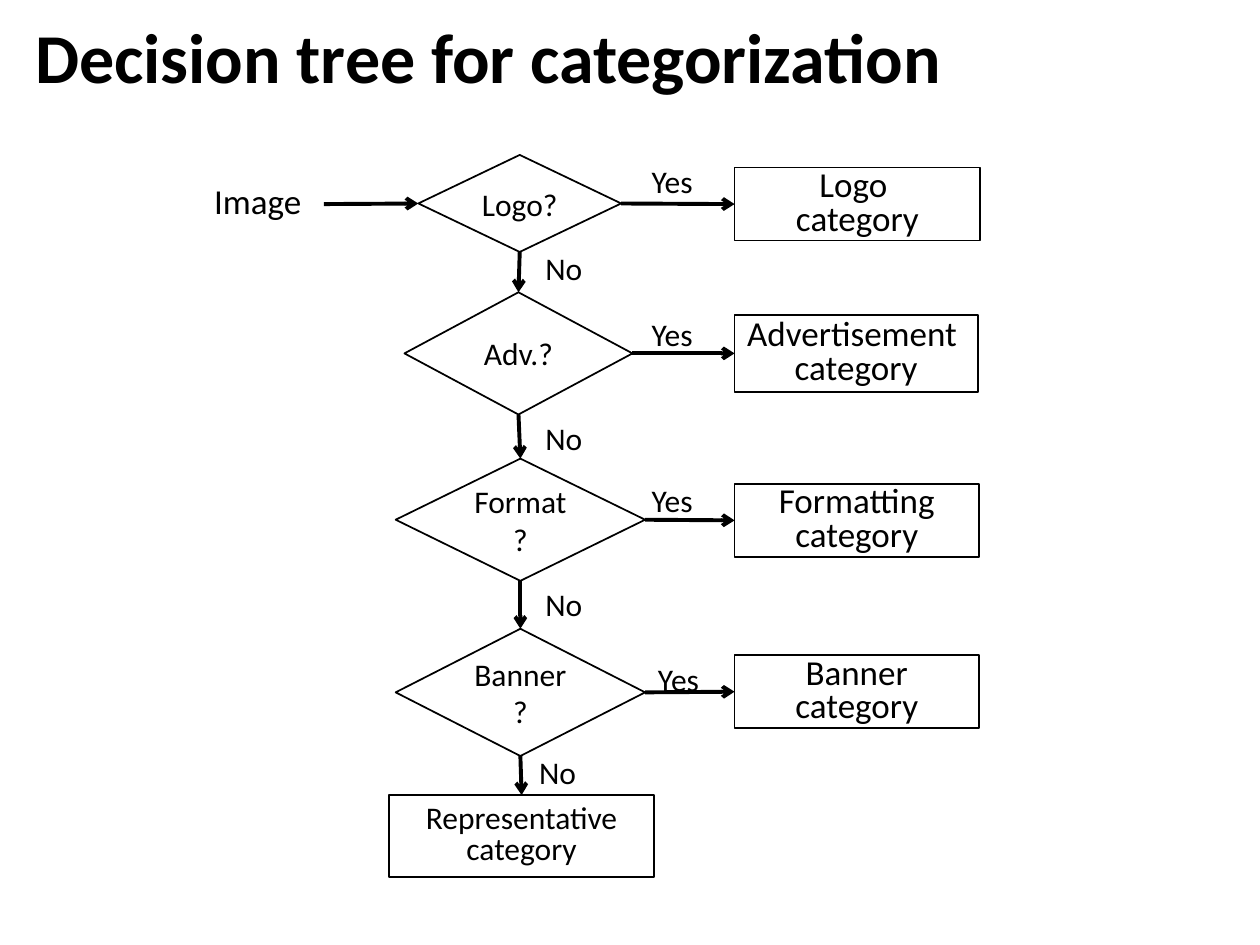
"""Build a slide with a decision tree for sorting images into categories."""
from dataclasses import dataclass

import lxml.etree
import pptx
import pptx.dml.color
import pptx.enum.shapes
import pptx.enum.text
import pptx.oxml.ns
import pptx.util

Inches = pptx.util.Inches
Pt = pptx.util.Pt
MSO = pptx.enum.shapes.MSO_SHAPE
ALIGN = pptx.enum.text.PP_ALIGN
ANCHOR = pptx.enum.text.MSO_ANCHOR
TOP, LEFT, BOTTOM, RIGHT = range(4)


@dataclass(frozen=True)
class Theme:
    """Colours, type sizes and line widths."""
    font: str = "Calibri"
    ink: pptx.dml.color.RGBColor = pptx.dml.color.RGBColor(0, 0, 0)
    paper: pptx.dml.color.RGBColor = pptx.dml.color.RGBColor(255, 255, 255)
    title: int = 40
    category: int = 20
    question: int = 18
    outline: float = 1
    arrow: float = 2.25


@dataclass(frozen=True)
class Box:
    """Place and text of a shape, in inches."""
    text: str
    x: float
    y: float
    w: float
    h: float


@dataclass(frozen=True)
class Step:
    """A question, its category and the places of its two answers."""
    question: Box
    category: Box
    yes: tuple[float, float]
    no: tuple[float, float]


THEME = Theme()
IMAGE = Box("Image", 1.39, 1.34, 1.31, 0.51)
REST = Box("Representative\ncategory", 3.09, 6.31, 2.1, 0.65)
STEPS = [
    Step(Box("Logo?", 3.32, 1.23, 1.61, 0.77),
         Box("Logo \ncategory", 5.83, 1.33, 1.95, 0.58), (4.93, 1.24), (4.07, 1.93)),
    Step(Box("Adv.?", 3.21, 2.32, 1.81, 0.97),
         Box("Advertisement \ncategory", 5.83, 2.5, 1.93, 0.61), (4.93, 2.45), (4.07, 3.28)),
    Step(Box("Format?", 3.14, 3.64, 1.98, 0.97),
         Box("Formatting\ncategory", 5.83, 3.84, 1.94, 0.58), (4.93, 3.77), (4.07, 4.59)),
    Step(Box("Banner?", 3.14, 4.99, 1.98, 1.01),
         Box("Banner\ncategory", 5.83, 5.2, 1.94, 0.58), (4.98, 5.19), (4.02, 5.93)),
]


def write(tf, text: str, *, size: int, bold: bool = False, align=ALIGN.CENTER,
          anchor=ANCHOR.MIDDLE, spacing: float | None = None) -> None:
    """Fill a text frame, one paragraph per line of text."""
    tf.word_wrap = True
    tf.vertical_anchor = anchor
    for i, line in enumerate(text.split("\n")):
        p = tf.add_paragraph() if i else tf.paragraphs[0]
        p.alignment = align
        p.line_spacing = spacing
        r = p.add_run()
        r.text = line
        r.font.name = THEME.font
        r.font.size = Pt(size)
        r.font.bold = bold
        r.font.color.rgb = THEME.ink


def add_box(s, box: Box, kind=MSO.RECTANGLE, *, size: int, outlined: bool = True,
            spacing: float | None = None):
    """Draw a filled shape with centred text."""
    sp = s.shapes.add_shape(kind, *map(Inches, (box.x, box.y, box.w, box.h)))
    sp.shadow.inherit = False
    sp.fill.solid()
    sp.fill.fore_color.rgb = THEME.paper
    if outlined:
        sp.line.color.rgb = THEME.ink
        sp.line.width = Pt(THEME.outline)
    else:
        sp.line.fill.background()
    write(sp.text_frame, box.text, size=size, spacing=spacing)
    return sp


def add_arrow(s, end, end_site: int, begin=None, begin_site: int = RIGHT,
              start: tuple[float, float] = (0, 0)) -> None:
    """Draw an arrow to a shape from another shape or a free point."""
    x, y = map(Inches, start)
    c = s.shapes.add_connector(pptx.enum.shapes.MSO_CONNECTOR.STRAIGHT, x, y, x, y)
    if begin is not None:
        c.begin_connect(begin, begin_site)
    c.end_connect(end, end_site)
    c.line.color.rgb = THEME.ink
    c.line.width = Pt(THEME.arrow)
    qn = pptx.oxml.ns.qn
    lxml.etree.SubElement(c.line._get_or_add_ln(), qn("a:tailEnd"), type="arrow")
    lxml.etree.SubElement(c._element.spPr, qn("a:effectLst"))


def add_label(s, text: str, at: tuple[float, float]) -> None:
    """Write an answer beside its arrow."""
    sp = s.shapes.add_textbox(*map(Inches, (*at, 0.81, 0.4)))
    write(sp.text_frame, text, size=THEME.question, anchor=ANCHOR.TOP)
    sp.text_frame.auto_size = pptx.enum.text.MSO_AUTO_SIZE.SHAPE_TO_FIT_TEXT


def add_title(s, text: str) -> None:
    """Place and fill the title."""
    sp = s.shapes.title
    sp.left, sp.top, sp.width, sp.height = map(Inches, (0.18, 0.16, 8.62, 0.64))
    write(sp.text_frame, text, size=THEME.title, bold=True, align=ALIGN.LEFT, spacing=0.9)


def main() -> None:
    """Build and save the slide."""
    prs = pptx.Presentation()
    prs.slide_width, prs.slide_height = Inches(10), Inches(7.5)
    s = prs.slides.add_slide(prs.slide_layouts[5])
    add_title(s, "Decision tree for categorization")
    add_box(s, IMAGE, size=THEME.category, outlined=False)
    questions = [add_box(s, step.question, MSO.DIAMOND, size=THEME.question) for step in STEPS]
    categories = [add_box(s, step.category, size=THEME.category, spacing=0.8) for step in STEPS]
    rest = add_box(s, REST, size=THEME.question, spacing=0.8)
    add_arrow(s, questions[0], LEFT, start=(2.57, 1.62))
    followers = [*questions[1:], rest]
    for step, question, category, follower in zip(STEPS, questions, categories, followers):
        add_arrow(s, category, LEFT, question, RIGHT)
        add_arrow(s, follower, TOP, question, BOTTOM)
        add_label(s, "Yes", step.yes)
        add_label(s, "No", step.no)
    prs.save("out.pptx")


if __name__ == "__main__":
    main()
